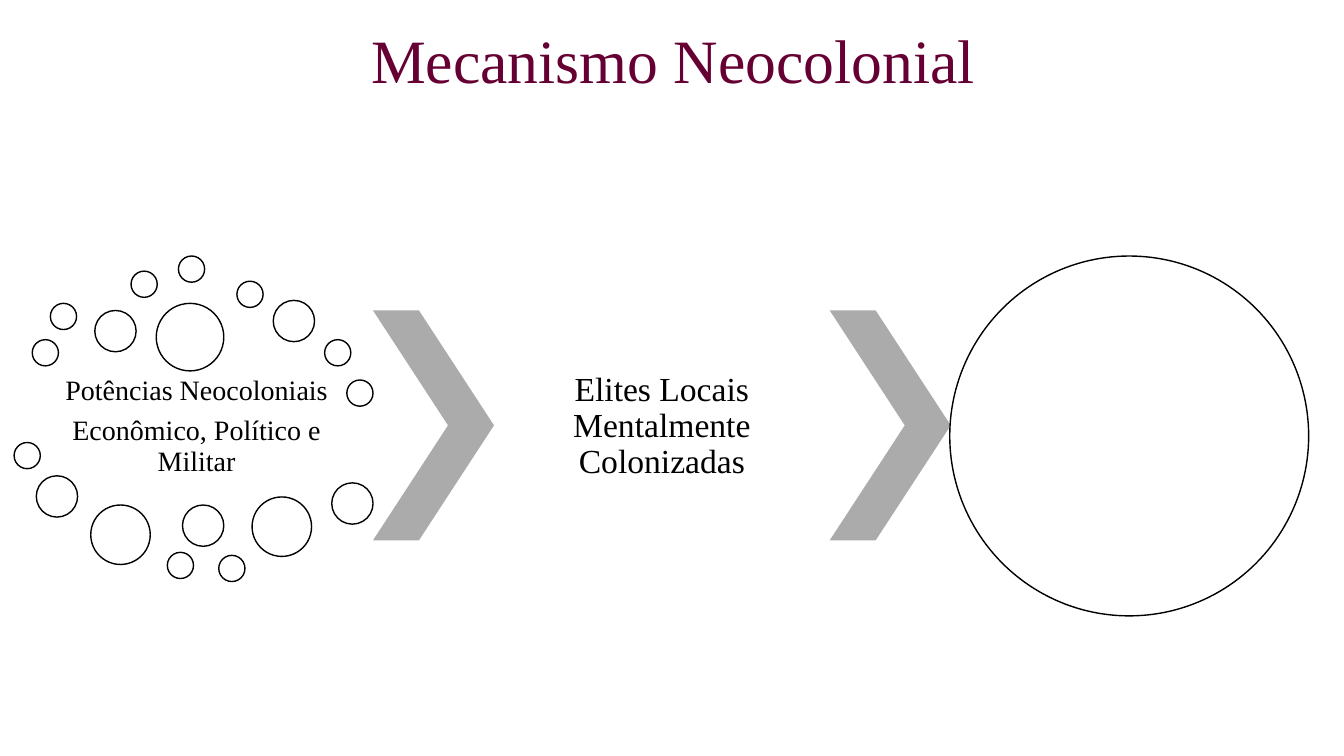
from dataclasses import dataclass

from pptx import Presentation
from pptx.dml.color import RGBColor
from pptx.enum.shapes import MSO_SHAPE as Shape
from pptx.enum.text import MSO_ANCHOR as Anchor, PP_ALIGN as Align
from pptx.util import Inches, Pt


@dataclass(frozen=True)
class Theme:
    font: str = "Times New Roman"
    title_color: RGBColor = RGBColor(0x66, 0x00, 0x33)
    ink: RGBColor = RGBColor(0x00, 0x00, 0x00)
    paper: RGBColor = RGBColor(0xFF, 0xFF, 0xFF)
    arrow: RGBColor = RGBColor(0xAB, 0xAB, 0xAB)
    title_size: int = 44
    powers_size: int = 20
    elites_size: int = 24
    line_spacing: float = 0.9
    space_after: float = 0.35
    outline: float = 1
    text_margin: float = 0.03


class SlideBuilder:
    def __init__(self, slide, theme):
        self.slide = slide
        self.theme = theme

    def _write(self, frame, paragraphs, size, color):
        frame.word_wrap = True
        frame.vertical_anchor = Anchor.MIDDLE
        for index, text in enumerate(paragraphs):
            paragraph = frame.paragraphs[0] if index == 0 else frame.add_paragraph()
            paragraph.text = text
            paragraph.alignment = Align.CENTER
            paragraph.line_spacing = self.theme.line_spacing
            paragraph.space_before = Pt(0)
            paragraph.font.name = self.theme.font
            paragraph.font.size = Pt(size)
            paragraph.font.color.rgb = color

    def title(self, text, left, top, width, height):
        title = self.slide.shapes.title
        title.left, title.top = Inches(left), Inches(top)
        title.width, title.height = Inches(width), Inches(height)
        self._write(title.text_frame, [text], self.theme.title_size, self.theme.title_color)

    def label(self, paragraphs, size, left, top, width, height):
        box = self.slide.shapes.add_textbox(
            Inches(left), Inches(top), Inches(width), Inches(height))
        frame = box.text_frame
        margin = Inches(self.theme.text_margin)
        frame.margin_left = frame.margin_right = margin
        frame.margin_top = frame.margin_bottom = margin
        self._write(frame, paragraphs, size, self.theme.ink)
        for paragraph in frame.paragraphs:
            paragraph.space_after = Pt(size * self.theme.space_after)

    def _shape(self, kind, fill, left, top, width, height):
        shape = self.slide.shapes.add_shape(
            kind, Inches(left), Inches(top), Inches(width), Inches(height))
        shape.shadow.inherit = False
        shape.fill.solid()
        shape.fill.fore_color.rgb = fill
        return shape

    def circle(self, left, top, width, height):
        circle = self._shape(Shape.OVAL, self.theme.paper, left, top, width, height)
        circle.line.color.rgb = self.theme.ink
        circle.line.width = Pt(self.theme.outline)

    def chevron(self, left, top, width, height):
        chevron = self._shape(Shape.CHEVRON, self.theme.arrow, left, top, width, height)
        chevron.adjustments[0] = 0.62
        chevron.line.fill.background()


# Left and top of each circle in the ring, grouped by diameter
POWER_CIRCLES = {
    0.26: [(0.32, 3.37), (0.5, 3.01), (1.3, 2.69), (1.77, 2.54), (2.35, 2.79), (3.22, 3.37),
           (3.44, 3.77), (0.14, 4.39), (1.66, 5.48), (2.17, 5.51)],
    0.41: [(0.94, 3.08), (2.71, 2.98), (0.36, 4.72), (1.81, 5.01), (3.29, 4.79)],
    0.59: [(0.9, 5.01), (2.5, 4.93)],
    0.67: [(1.55, 3.01)],
}


def main():
    theme = Theme()
    deck = Presentation()
    deck.slide_width, deck.slide_height = Inches(13.33), Inches(7.5)
    builder = SlideBuilder(deck.slides.add_slide(deck.slide_layouts[5]), theme)

    builder.title("Mecanismo Neocolonial", 0.93, 0.23, 11.5, 0.81)

    builder.label(["Potências Neocoloniais", "Econômico, Político e Militar"],
                  theme.powers_size, 0.44, 3.5, 3.02, 1.47)
    for diameter, corners in POWER_CIRCLES.items():
        for left, top in corners:
            builder.circle(left, top, diameter, diameter)

    builder.label(["Elites Locais Mentalmente Colonizadas"],
                  theme.elites_size, 4.9, 3.07, 3.33, 2.32)
    for left in (3.7, 8.23):
        builder.chevron(left, 3.08, 1.2, 2.28)
    builder.circle(9.42, 2.54, 3.56, 3.57)

    deck.save("out.pptx")


if __name__ == "__main__":
    main()
